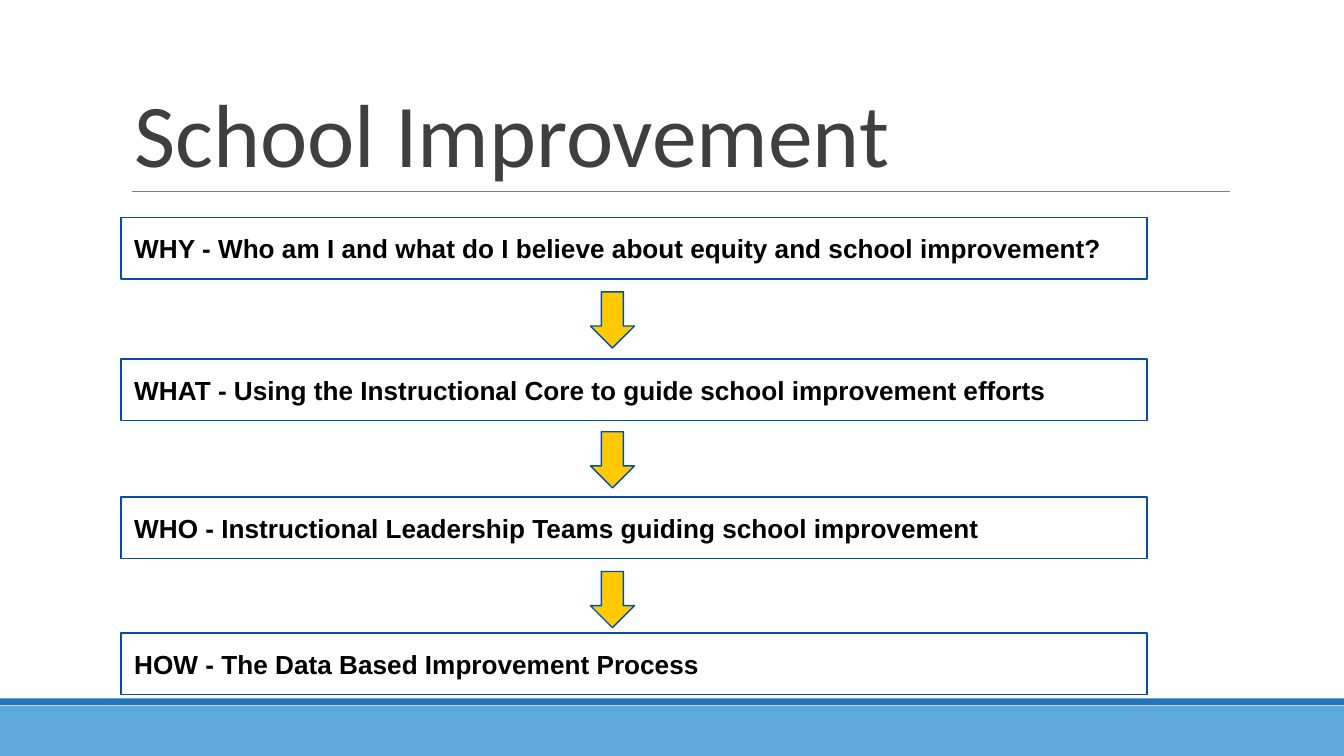
from dataclasses import dataclass

from pptx import Presentation
from pptx.dml.color import RGBColor
from pptx.enum.shapes import MSO_CONNECTOR as Connector, MSO_SHAPE as Shape
from pptx.enum.text import MSO_ANCHOR as Anchor, PP_ALIGN as Align
from pptx.oxml.xmlchemy import OxmlElement
from pptx.util import Pt


@dataclass(frozen=True)
class Theme:
    title_color: str = "3F3F3F"
    text_color: str = "000000"
    outline: str = "034EA1"
    arrow: str = "FFCA05"
    rule: str = "7F7F7F"
    footer: str = "5DA9DB"
    footer_edge: str = "2275B9"
    title_font: str = "Calibri"
    body_font: str = "Arial"
    title_size: float = 48
    body_size: float = 14
    line_width: float = 0.75


class SlideBuilder:
    def __init__(self, slide, theme):
        self.slide = slide
        self.theme = theme

    def shape(self, kind, left, top, width, height, fill=None, line=None):
        shape = self.slide.shapes.add_shape(
            kind, Pt(left), Pt(top), Pt(width), Pt(height))
        shape.shadow.inherit = False
        if fill:
            shape.fill.solid()
            shape.fill.fore_color.rgb = RGBColor.from_string(fill)
        else:
            shape.fill.background()
        if line:
            shape.line.color.rgb = RGBColor.from_string(line)
            shape.line.width = Pt(self.theme.line_width)
        else:
            shape.line.fill.background()
        return shape

    def text(self, shape, text, font, size, color, bold, anchor, inset):
        frame = shape.text_frame
        frame.text = text
        frame.word_wrap = True
        frame.vertical_anchor = anchor
        frame.margin_left = frame.margin_right = Pt(7.2)
        frame.margin_top = frame.margin_bottom = Pt(inset)
        paragraph = frame.paragraphs[0]
        paragraph.alignment = Align.LEFT
        run_font = paragraph.runs[0].font
        run_font.name = font
        run_font.size = Pt(size)
        run_font.bold = bold
        run_font.color.rgb = RGBColor.from_string(color)
        return paragraph

    def title(self, text, left, top, width, height):
        box = self.slide.shapes.add_textbox(
            Pt(left), Pt(top), Pt(width), Pt(height))
        paragraph = self.text(
            box, text, self.theme.title_font, self.theme.title_size,
            self.theme.title_color, False, Anchor.BOTTOM, 3.6)
        paragraph.line_spacing = 0.85

    def rule(self, left, right, top):
        line = self.slide.shapes.add_connector(
            Connector.STRAIGHT, Pt(left), Pt(top), Pt(right), Pt(top))
        line.line.color.rgb = RGBColor.from_string(self.theme.rule)
        line.line.width = Pt(self.theme.line_width)
        line._element.spPr.append(OxmlElement("a:effectLst"))

    def step(self, text, left, top, width, height):
        box = self.shape(Shape.RECTANGLE, left, top, width, height,
                         line=self.theme.outline)
        self.text(box, text, self.theme.body_font, self.theme.body_size,
                  self.theme.text_color, True, Anchor.MIDDLE, 7.2)

    def down_arrow(self, left, top, width, height):
        self.shape(Shape.DOWN_ARROW, left, top, width, height,
                   self.theme.arrow, self.theme.outline)


def main():
    presentation = Presentation()
    presentation.slide_width = Pt(720)
    presentation.slide_height = Pt(405)
    slide = presentation.slides.add_slide(presentation.slide_layouts[6])
    theme = Theme()
    builder = SlideBuilder(slide, theme)

    builder.shape(Shape.RECTANGLE, 0, 378, 720, 27, theme.footer)
    builder.shape(Shape.RECTANGLE, 0, 374.1, 720, 3.6, theme.footer_edge)
    builder.rule(70.7, 659, 102.6)
    builder.title("School Improvement", 64.8, 17.3, 628.6, 85.7)

    steps = [
        (116.6, "WHY - Who am I and what do I believe about equity and school improvement?"),
        (192.3, "WHAT - Using the Instructional Core to guide school improvement efforts"),
        (266.3, "WHO - Instructional Leadership Teams guiding school improvement"),
        (339.2, "HOW - The Data Based Improvement Process"),
    ]
    for top, text in steps:
        builder.step(text, 64.8, top, 549.6, 33)

    for index in range(len(steps) - 1):
        builder.down_arrow(316.3, 156.4 + 74.9 * index, 23.6, 30.1)

    presentation.save("out.pptx")


if __name__ == "__main__":
    main()
